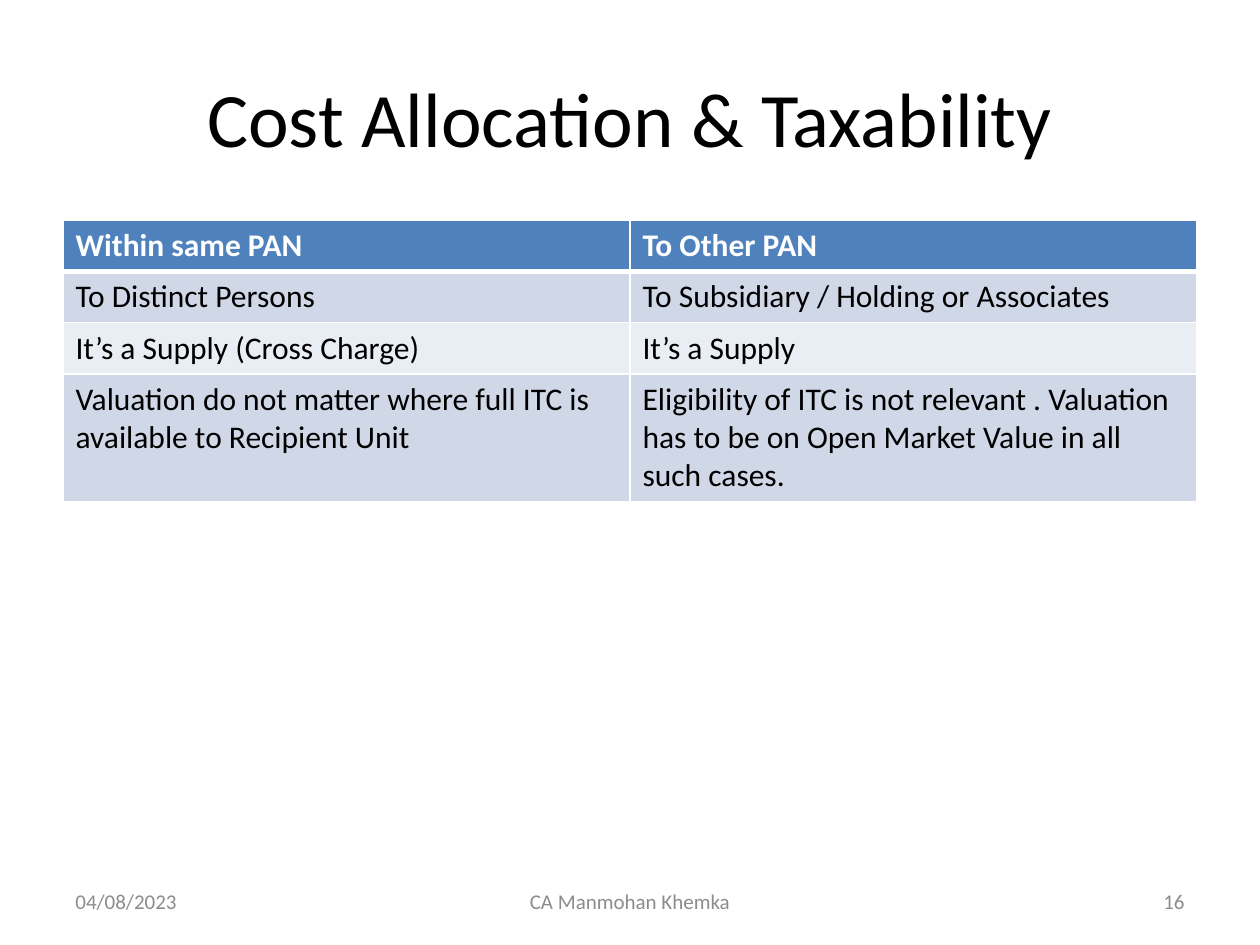
import pptx
import pptx.dml.color
import pptx.enum.text
import pptx.oxml.ns
import pptx.util
import lxml.etree

Pt = pptx.util.Pt
ALIGN = pptx.enum.text.PP_ALIGN
MIDDLE = pptx.enum.text.MSO_ANCHOR.MIDDLE

MARGIN = 36
CONTENT_WIDTH = 648
FOOTER_TOP = 500.5
FOOTER_HEIGHT = 28.75
ROW_HEIGHTS = [29.2, 29.2, 29.2, 72]
ROWS = [
    ("Within same PAN", "To Other PAN"),
    ("To Distinct Persons", "To Subsidiary / Holding or Associates"),
    ("It’s a Supply (Cross Charge)", "It’s a Supply"),
    (
        "Valuation do not matter where full ITC is available to Recipient Unit",
        "Eligibility of ITC is not relevant . Valuation has to be on Open Market Value in all such cases.",
    ),
]
FOOTERS = [
    ("04/08/2023", MARGIN, 168, ALIGN.LEFT),
    ("CA Manmohan Khemka", 246, 228, ALIGN.CENTER),
    ("16", 516, 168, ALIGN.RIGHT),
]


def color(value):
    return pptx.dml.color.RGBColor.from_string(value)


class SlideBuilder:
    font = "Calibri"
    dark = "000000"
    light = "FFFFFF"
    muted = "8C8C8C"
    header = "4F81BD"
    bands = ("D0D8E8", "E9EDF4")

    def __init__(self, slide):
        self.slide = slide

    def place(self, shape, left, top, width, height):
        shape.left, shape.top = Pt(left), Pt(top)
        shape.width, shape.height = Pt(width), Pt(height)

    def add_text(self, frame, text, size, fill, align=ALIGN.LEFT, bold=False):
        paragraph = frame.paragraphs[0]
        paragraph.alignment = align
        run = paragraph.add_run()
        run.text = text
        run.font.name = self.font
        run.font.size = Pt(size)
        run.font.bold = bold
        run.font.color.rgb = color(fill)

    def title(self, text, left, top, width, height):
        shape = self.slide.shapes.title
        self.place(shape, left, top, width, height)
        shape.text_frame.vertical_anchor = MIDDLE
        self.add_text(shape.text_frame, text, 44, self.dark, ALIGN.CENTER)

    def footer(self, text, left, width, align):
        shape = self.slide.shapes.add_textbox(
            Pt(left), Pt(FOOTER_TOP), Pt(width), Pt(FOOTER_HEIGHT)
        )
        shape.text_frame.word_wrap = True
        shape.text_frame.vertical_anchor = MIDDLE
        self.add_text(shape.text_frame, text, 12, self.muted, align)

    def borders(self, cell, widths):
        properties = cell._tc.get_or_add_tcPr()
        qualified = pptx.oxml.ns.qn
        for side, width in widths.items():
            line = lxml.etree.SubElement(
                properties, qualified(f"a:ln{side}"), w=str(Pt(width))
            )
            fill = lxml.etree.SubElement(line, qualified("a:solidFill"))
            lxml.etree.SubElement(fill, qualified("a:srgbClr"), val=self.light)

    def table(self, rows, heights, left, top, width):
        columns = len(rows[0])
        table = self.slide.shapes.add_table(
            len(rows), columns, Pt(left), Pt(top), Pt(width), Pt(sum(heights))
        ).table
        for column in table.columns:
            column.width = Pt(width / columns)
        for index, texts in enumerate(rows):
            table.rows[index].height = Pt(heights[index])
            heading = index == 0
            background = self.header if heading else self.bands[(index - 1) % 2]
            widths = {"L": 1, "R": 1, "T": 3 if index == 1 else 1, "B": 3 if heading else 1}
            for position, text in enumerate(texts):
                cell = table.cell(index, position)
                self.borders(cell, widths)
                cell.fill.solid()
                cell.fill.fore_color.rgb = color(background)
                self.add_text(
                    cell.text_frame, text, 18,
                    self.light if heading else self.dark, bold=heading,
                )


def main():
    presentation = pptx.Presentation()
    presentation.slide_width = Pt(720)
    presentation.slide_height = Pt(540)
    builder = SlideBuilder(presentation.slides.add_slide(presentation.slide_layouts[5]))
    builder.title("Cost Allocation & Taxability", MARGIN, 21.6, CONTENT_WIDTH, 90)
    builder.table(ROWS, ROW_HEIGHTS, MARGIN, 126, CONTENT_WIDTH)
    for footer in FOOTERS:
        builder.footer(*footer)
    presentation.save("out.pptx")


if __name__ == "__main__":
    main()
